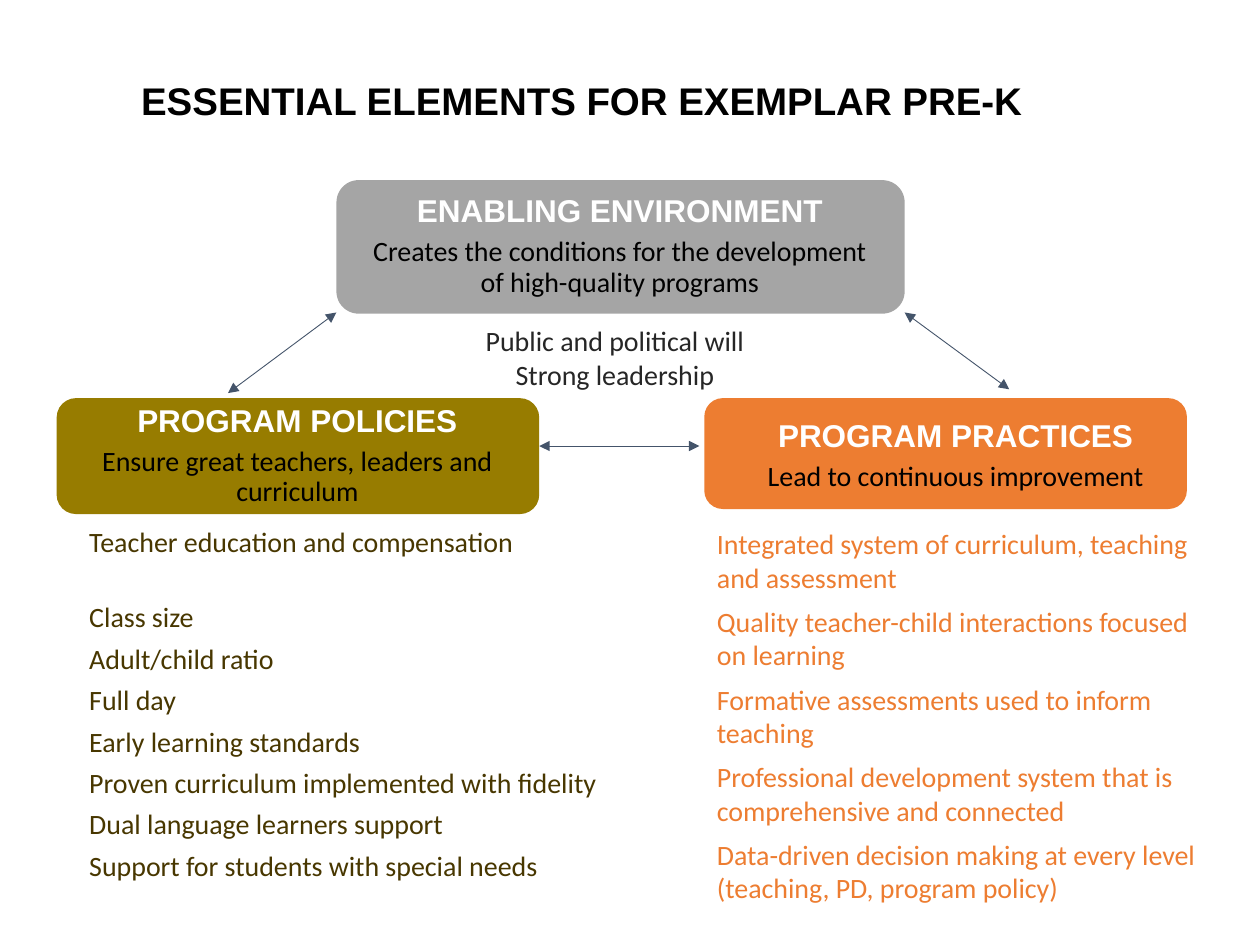
from lxml import etree
from pptx import Presentation
from pptx.dml.color import RGBColor
from pptx.enum.shapes import MSO_CONNECTOR, MSO_SHAPE
from pptx.enum.text import MSO_ANCHOR, PP_ALIGN
from pptx.oxml.ns import qn
from pptx.util import Inches, Pt

COLORS = {
    "black": "000000", "white": "FFFFFF", "gray": "A5A5A5",
    "olive": "977C00", "dark_olive": "483700", "orange": "ED7D31",
    "charcoal": "262626", "slate": "44546A",
}
POLICIES = [
    "Teacher education and compensation",
    "Class size",
    "Adult/child ratio",
    "Full day",
    "Early learning standards",
    "Proven curriculum implemented with fidelity",
    "Dual language learners support",
    "Support for students with special needs",
]
PRACTICES = [
    "Integrated system of curriculum, teaching and assessment",
    "Quality teacher-child interactions focused on learning",
    "Formative assessments used to inform teaching",
    "Professional development system that is comprehensive and connected",
    "Data-driven decision making at every level (teaching, PD, program policy)",
]


def rgb(name):
    return RGBColor.from_string(COLORS[name])


def inches(box):
    return [Inches(value) for value in box]


def set_margins(frame, x, y):
    frame.margin_left = frame.margin_right = Inches(x)
    frame.margin_top = frame.margin_bottom = Inches(y)


def format_paragraph(paragraph, color, size=16, font="Calibri", bold=False,
                     align=PP_ALIGN.LEFT):
    paragraph.alignment = align
    for run in paragraph.runs:
        run.font.size = Pt(size)
        run.font.name = font
        run.font.bold = bold
        run.font.color.rgb = rgb(color)


def add_title(slide, box, text):
    title = slide.shapes.title
    title.left, title.top, title.width, title.height = inches(box)
    frame = title.text_frame
    frame.text = text
    frame.vertical_anchor = MSO_ANCHOR.MIDDLE
    set_margins(frame, 0, 0)
    format_paragraph(frame.paragraphs[0], "black", 22, "Arial", True)


def add_text(shapes, box, lines, color, margins=(0, 0), gap=0,
             align=PP_ALIGN.LEFT):
    frame = shapes.add_textbox(*inches(box)).text_frame
    frame.word_wrap = True
    set_margins(frame, *margins)
    frame.text = "\n".join(lines)
    for index, paragraph in enumerate(frame.paragraphs):
        if index and gap:
            paragraph.space_before = Pt(gap)
        format_paragraph(paragraph, color, align=align)
    return frame


def add_card(slide, box, text_box, fill, heading, details):
    """Rounded panel grouped with its heading and description."""
    group = slide.shapes.add_group_shape()
    panel = group.shapes.add_shape(MSO_SHAPE.ROUNDED_RECTANGLE, *inches(box))
    panel.shadow.inherit = False
    panel.fill.solid()
    panel.fill.fore_color.rgb = rgb(fill)
    panel.line.fill.background()

    frame = add_text(group.shapes, text_box, [heading, *details], "black",
                     (0.03, 0.03), align=PP_ALIGN.CENTER)
    frame.vertical_anchor = MSO_ANCHOR.MIDDLE
    for paragraph in frame.paragraphs:
        paragraph.line_spacing = 0.9
    frame.paragraphs[1].space_before = Pt(4.5)
    format_paragraph(frame.paragraphs[0], "white", 18, "Arial", True,
                     PP_ALIGN.CENTER)


def add_double_arrow(slide, start, end):
    arrow = slide.shapes.add_connector(MSO_CONNECTOR.STRAIGHT,
                                       *inches(start + end))
    arrow.line.color.rgb = rgb("slate")
    arrow.line.width = Pt(0.5)
    line = arrow.line._get_or_add_ln()
    for tag in ("a:headEnd", "a:tailEnd"):
        etree.SubElement(line, qn(tag), type="triangle")
    etree.SubElement(arrow._element.spPr, qn("a:effectLst"))


def build_slide(presentation):
    slide = presentation.slides.add_slide(presentation.slide_layouts[5])
    add_title(slide, (1.12, 0.51, 7.61, 0.57),
              "ESSENTIAL ELEMENTS FOR EXEMPLAR PRE-K")

    # Three linked elements
    add_card(slide, (2.67, 1.43, 4.51, 1.06), (2.78, 1.48, 4.28, 0.96),
             "gray", "ENABLING ENVIRONMENT",
             ["Creates the conditions for the development",
              "of high-quality programs"])
    add_card(slide, (0.45, 3.16, 3.83, 0.92), (0.57, 3.21, 3.58, 0.83),
             "olive", "PROGRAM POLICIES",
             ["Ensure great teachers, leaders and curriculum"])
    add_card(slide, (5.59, 3.16, 3.83, 0.88), (5.77, 3.22, 3.63, 0.8),
             "orange", "PROGRAM PRACTICES",
             ["Lead to continuous improvement"])

    # Supporting points of each element
    add_text(slide.shapes, (2.97, 2.57, 3.82, 0.52),
             ["Public and political will", "Strong leadership"],
             "charcoal", align=PP_ALIGN.CENTER)
    add_text(slide.shapes, (5.62, 4.11, 3.96, 2.28), PRACTICES, "orange",
             (0.07, 0.07), gap=6)
    policies = add_text(slide.shapes, (0.61, 4.11, 4.38, 2.75), POLICIES,
                        "dark_olive", (0.1, 0.05), gap=4.5)
    policies.paragraphs[0].space_after = Pt(19.5)

    # Links between the elements
    add_double_arrow(slide, (4.28, 3.54), (5.55, 3.54))
    add_double_arrow(slide, (1.81, 3.12), (2.67, 2.48))
    add_double_arrow(slide, (8.01, 3.09), (7.18, 2.48))


def main():
    presentation = Presentation()
    presentation.slide_width = Inches(10)
    presentation.slide_height = Inches(7.5)
    build_slide(presentation)
    presentation.save("out.pptx")


if __name__ == "__main__":
    main()
